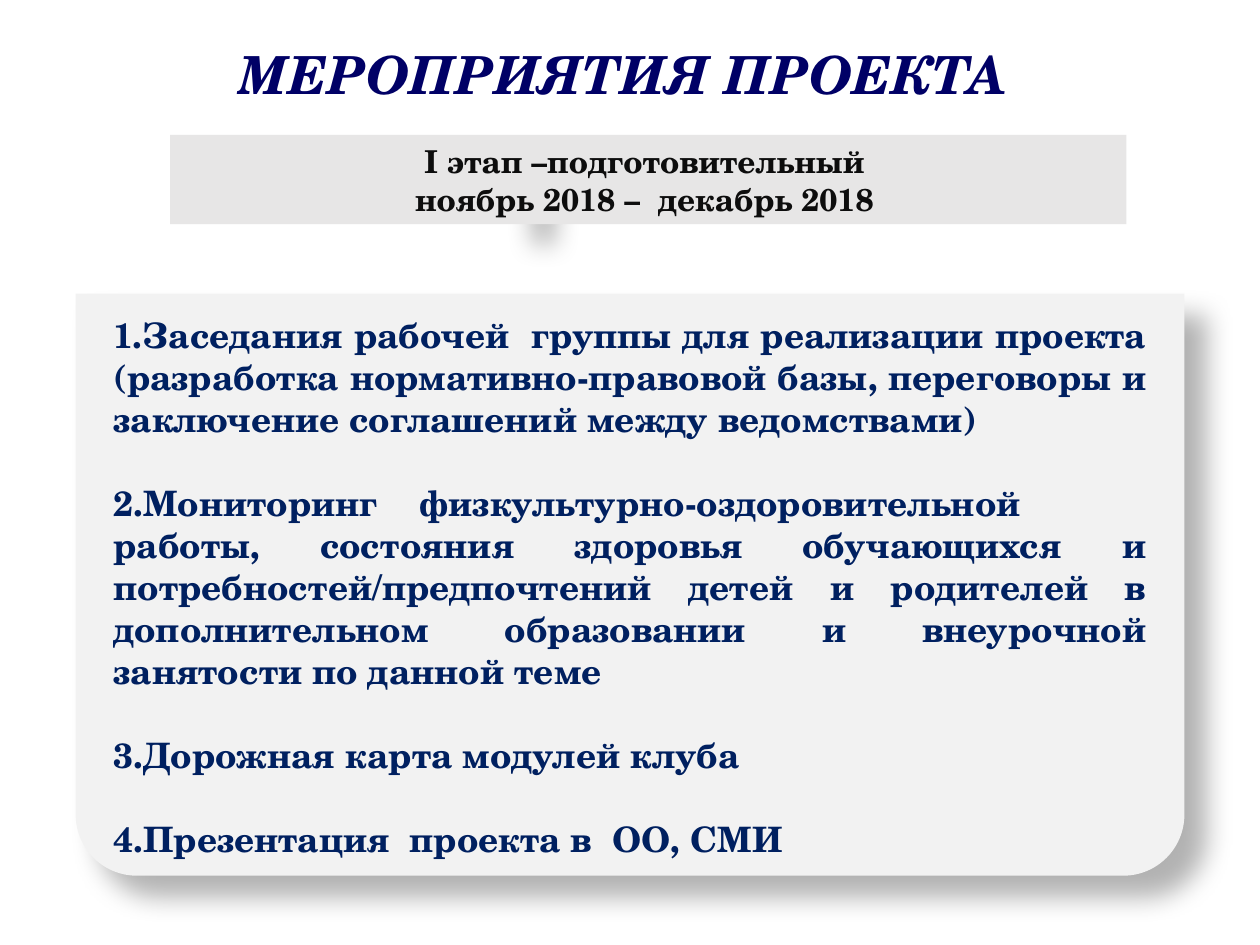
"""Build the slide that lists the activities of the first project stage."""
from dataclasses import dataclass

from lxml.etree import SubElement
from pptx import Presentation
from pptx.dml.color import RGBColor
from pptx.enum.shapes import MSO_SHAPE as Preset
from pptx.enum.text import MSO_ANCHOR as Anchor, MSO_AUTO_SIZE as AutoSize, PP_ALIGN as Align
from pptx.oxml.ns import qn
from pptx.util import Emu, Inches, Pt

FONT = "TeX Gyre Schola"
TITLE = "МЕРОПРИЯТИЯ ПРОЕКТА"
STAGE = ["I этап –подготовительный", "ноябрь 2018 –  декабрь 2018"]
ACTIVITIES = [
    "1.Заседания рабочей  группы для реализации проекта (разработка "
    "нормативно-правовой базы, переговоры и заключение соглашений между ведомствами)",
    "2.Мониторинг\tфизкультурно-оздоровительной\vработы, состояния здоровья "
    "обучающихся и потребностей/предпочтений детей и родителей в дополнительном "
    "образовании и внеурочной занятости по данной теме",
    "3.Дорожная карта модулей клуба",
    "4.Презентация  проекта в  ОО, СМИ",
]


@dataclass
class Box:
    left: float
    top: float
    width: float
    height: float

    def lengths(self) -> list[Emu]:
        return [Inches(value) for value in (self.left, self.top, self.width, self.height)]


@dataclass
class Panel:
    box: Box
    preset: Preset
    fill: str
    adjustments: tuple = ()
    rotation: int = 0
    shadow: bool = False


@dataclass
class TextStyle:
    size: int
    color: str
    align: Align
    italic: bool = False
    gap: int = 0
    tab: float = 0


CONNECTOR_BAR = Panel(Box(4.04, 1.23, 0.19, 0.53), Preset.ROUNDED_RECTANGLE, "DAE3F3", (0.1,), shadow=True)
ACTIVITY_CARD = Panel(Box(0.6, 2.33, 8.8, 4.62), Preset.ROUND_2_SAME_RECTANGLE, "F2F2F2", (0.105, 0), 180, True)
STAGE_BANNER = Panel(Box(1.35, 1.07, 7.59, 0.71), Preset.RECTANGLE, "E7E6E6")


def rgb(color: str) -> RGBColor:
    return RGBColor.from_string(color)


def apply(target, values: dict) -> None:
    for name, value in values.items():
        setattr(target, name, value)


def add_shadow(shape) -> None:
    effects = shape._element.spPr.find(qn("a:effectLst"))
    shadow = SubElement(
        effects, qn("a:outerShdw"), blurRad=str(Pt(15)), dist=str(Pt(18)),
        dir=str(45 * 60000), algn="tl", rotWithShape="0")
    color = SubElement(shadow, qn("a:srgbClr"), val="000000")
    SubElement(color, qn("a:alpha"), val="30000")


def add_panel(slide, panel: Panel):
    shape = slide.shapes.add_shape(panel.preset, *panel.box.lengths())
    for index, value in enumerate(panel.adjustments):
        shape.adjustments[index] = value
    shape.rotation = panel.rotation
    shape.fill.solid()
    shape.fill.fore_color.rgb = rgb(panel.fill)
    shape.line.fill.background()
    shape.shadow.inherit = False
    if panel.shadow:
        add_shadow(shape)
    return shape


def write(shape, texts: list[str], style: TextStyle, frame_format: dict) -> None:
    frame = shape.text_frame
    apply(frame, {"word_wrap": True, "auto_size": AutoSize.NONE} | frame_format)
    for index, text in enumerate(texts):
        paragraph = frame.add_paragraph() if index else frame.paragraphs[0]
        paragraph.text = text
        apply(paragraph, {"alignment": style.align, "line_spacing": 1.0,
                          "space_before": Pt(style.gap if index else 0)})
        if "\t" in text:
            tabs = SubElement(paragraph._p.get_or_add_pPr(), qn("a:tabLst"))
            SubElement(tabs, qn("a:tab"), pos=str(Inches(style.tab)), algn="l")
        for run in paragraph.runs:
            apply(run.font, {"name": FONT, "size": Pt(style.size), "bold": True, "italic": style.italic})
            run.font.color.rgb = rgb(style.color)


def main() -> None:
    presentation = Presentation()
    apply(presentation, {"slide_width": Inches(10), "slide_height": Inches(7.5)})
    slide = presentation.slides.add_slide(presentation.slide_layouts[5])

    title = slide.shapes.title
    apply(title, dict(zip(("left", "top", "width", "height"), Box(0.96, 0.28, 7.97, 0.61).lengths())))
    write(title, [TITLE], TextStyle(30, "000066", Align.CENTER, italic=True),
          {"vertical_anchor": Anchor.MIDDLE})

    add_panel(slide, CONNECTOR_BAR)
    add_panel(slide, ACTIVITY_CARD)
    activities = slide.shapes.add_textbox(*Box(0.74, 2.33, 8.52, 4.48).lengths())
    sides = ("left", "top", "right", "bottom")
    write(activities, ACTIVITIES, TextStyle(20, "002060", Align.JUSTIFY, gap=24, tab=2.43),
          {"vertical_anchor": Anchor.TOP} | {f"margin_{side}": Inches(0.16) for side in sides})

    banner = add_panel(slide, STAGE_BANNER)
    write(banner, STAGE, TextStyle(18, "0D0D0D", Align.CENTER),
          {"vertical_anchor": Anchor.MIDDLE, "margin_right": Inches(0.16)})
    presentation.save("out.pptx")


if __name__ == "__main__":
    main()
